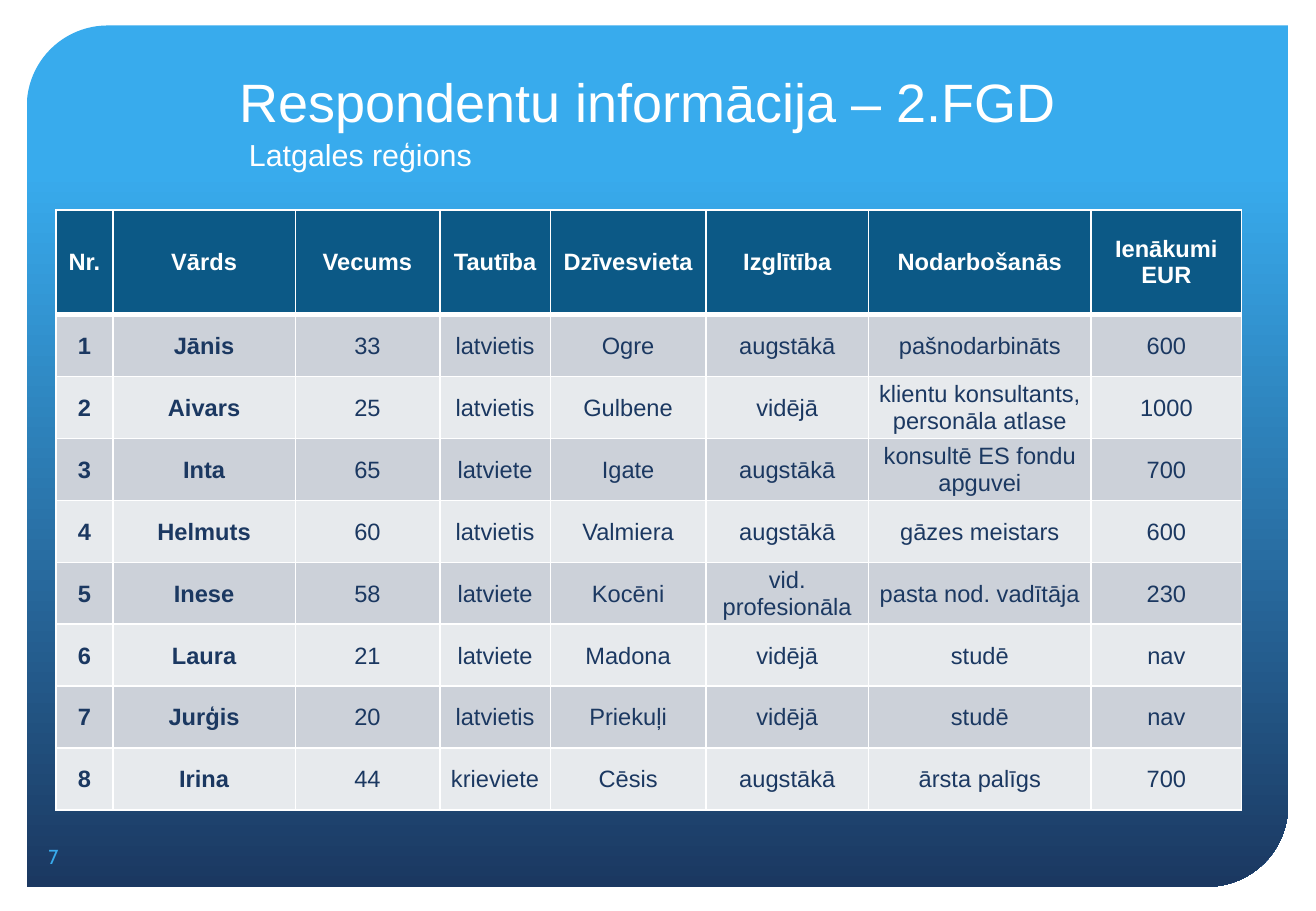
from lxml import etree
from pptx import Presentation
from pptx.dml.color import RGBColor
from pptx.enum.shapes import MSO_SHAPE
from pptx.enum.text import MSO_ANCHOR, MSO_AUTO_SIZE, PP_ALIGN
from pptx.oxml.ns import qn
from pptx.util import Inches, Pt

ROUND_DIAGONAL = MSO_SHAPE.ROUND_2_DIAG_RECTANGLE
BOTTOM, MIDDLE = MSO_ANCHOR.BOTTOM, MSO_ANCHOR.MIDDLE
LEFT, CENTER = PP_ALIGN.LEFT, PP_ALIGN.CENTER
NO_AUTOFIT = MSO_AUTO_SIZE.NONE

WHITE = RGBColor(0xFF, 0xFF, 0xFF)
SKY = RGBColor(0x38, 0xAB, 0xED)
NAVY = RGBColor(0x1B, 0x38, 0x61)
HEADER_BLUE = RGBColor(0x0C, 0x59, 0x86)
BANDS = (RGBColor(0xCC, 0xD1, 0xD9), RGBColor(0xE7, 0xEA, 0xED))

HEADERS = ("Nr.", "Vārds", "Vecums", "Tautība", "Dzīvesvieta", "Izglītība",
           "Nodarbošanās", "Ienākumi EUR")
RESPONDENTS = (
    ("Jānis", "33", "latvietis", "Ogre", "augstākā", "pašnodarbināts", "600"),
    ("Aivars", "25", "latvietis", "Gulbene", "vidējā",
     "klientu konsultants, personāla atlase", "1000"),
    ("Inta", "65", "latviete", "Igate", "augstākā",
     "konsultē ES fondu apguvei", "700"),
    ("Helmuts", "60", "latvietis", "Valmiera", "augstākā", "gāzes meistars", "600"),
    ("Inese", "58", "latviete", "Kocēni", "vid. profesionāla",
     "pasta nod. vadītāja", "230"),
    ("Laura", "21", "latviete", "Madona", "vidējā", "studē", "nav"),
    ("Jurģis", "20", "latvietis", "Priekuļi", "vidējā", "studē", "nav"),
    ("Irina", "44", "krieviete", "Cēsis", "augstākā", "ārsta palīgs", "700"),
)
COLUMN_WIDTHS = (0.47, 1.5, 1.19, 0.91, 1.28, 1.34, 1.83, 1.24)
HEADER_HEIGHT, ROW_HEIGHT = 0.86, 0.51


class SlideBuilder:
    """Holds the text style and the slide being filled."""

    font_name = "Arial"

    def __init__(self, slide):
        self.slide = slide

    def style(self, paragraph, size, color, bold=False, align=LEFT, name=None):
        paragraph.alignment = align
        font = paragraph.font
        font.name = name or self.font_name
        font.size = Pt(size)
        font.bold = bold
        font.color.rgb = color

    def panel(self, left, top, width, height):
        shape = self.slide.shapes.add_shape(
            ROUND_DIAGONAL, Inches(left), Inches(top), Inches(width), Inches(height))
        shape.shadow.inherit = False
        shape.adjustments[0] = 0.094
        shape.adjustments[1] = 0
        shape.line.fill.background()
        shape.fill.gradient()
        shape.fill.gradient_angle = 270
        for stop, (position, color) in zip(shape.fill.gradient_stops,
                                           ((0.17, SKY), (1, NAVY))):
            stop.position = position
            stop.color.rgb = color
        # Send the panel behind the title
        self.slide.shapes.element.insert(2, shape.element)

    def title(self, text, left, top, width, height):
        shape = self.slide.shapes.title
        shape.left, shape.top = Inches(left), Inches(top)
        shape.width, shape.height = Inches(width), Inches(height)
        frame = shape.text_frame
        frame.text = text
        frame.auto_size = NO_AUTOFIT
        frame.vertical_anchor = BOTTOM
        self.style(frame.paragraphs[0], 32, WHITE)

    def text(self, text, left, top, width, height, size, color, name=None, wrap=True):
        shape = self.slide.shapes.add_textbox(
            Inches(left), Inches(top), Inches(width), Inches(height))
        frame = shape.text_frame
        frame.word_wrap = wrap
        frame.text = text
        self.style(frame.paragraphs[0], size, color, name=name)

    def borders(self, cell, top, bottom):
        properties = cell._tc.get_or_add_tcPr()
        sides = (("a:lnL", 1), ("a:lnR", 1), ("a:lnT", top), ("a:lnB", bottom))
        for index, (tag, points) in enumerate(sides):
            line = etree.Element(qn(tag), w=str(Pt(points)))
            fill = etree.SubElement(line, qn("a:solidFill"))
            etree.SubElement(fill, qn("a:srgbClr"), val=str(WHITE))
            properties.insert(index, line)

    def table(self, rows, left, top):
        height = HEADER_HEIGHT + ROW_HEIGHT * (len(rows) - 1)
        table = self.slide.shapes.add_table(
            len(rows), len(COLUMN_WIDTHS), Inches(left), Inches(top),
            Inches(sum(COLUMN_WIDTHS)), Inches(height)).table
        for column, width in zip(table.columns, COLUMN_WIDTHS):
            column.width = Inches(width)
        for row_index, values in enumerate(rows):
            header = row_index == 0
            table.rows[row_index].height = Inches(HEADER_HEIGHT if header else ROW_HEIGHT)
            for column_index, value in enumerate(values):
                cell = table.cell(row_index, column_index)
                cell.text = value
                cell.vertical_anchor = MIDDLE
                if not header:
                    cell.margin_left = cell.margin_right = cell.margin_top = Inches(0.01)
                    cell.margin_bottom = 0
                cell.fill.solid()
                cell.fill.fore_color.rgb = (
                    HEADER_BLUE if header else BANDS[(row_index - 1) % 2])
                self.borders(cell, 3 if row_index == 1 else 1, 3 if header else 1)
                self.style(cell.text_frame.paragraphs[0], 14,
                           WHITE if header else NAVY,
                           bold=header or column_index < 2, align=CENTER)


def main():
    presentation = Presentation()
    presentation.slide_width = Inches(10.83)
    presentation.slide_height = Inches(7.5)
    builder = SlideBuilder(presentation.slides.add_slide(presentation.slide_layouts[5]))

    # Background and heading
    builder.panel(0.22, 0.21, 10.38, 7.09)
    builder.title("Respondentu informācija – 2.FGD", 1.87, 0.36, 7.48, 0.79)

    # Respondent table, numbered from 1
    numbered = [(str(number), *person) for number, person in enumerate(RESPONDENTS, 1)]
    builder.table([HEADERS, *numbered], 0.46, 1.73)

    # Region and page number
    builder.text("Latgales reģions", 1.95, 1.07, 2.05, 0.4, 18, WHITE, wrap=False)
    builder.text("7", 0.3, 6.9, 0.58, 0.4, 12, SKY, name="Cabin")

    presentation.save("out.pptx")


if __name__ == "__main__":
    main()
